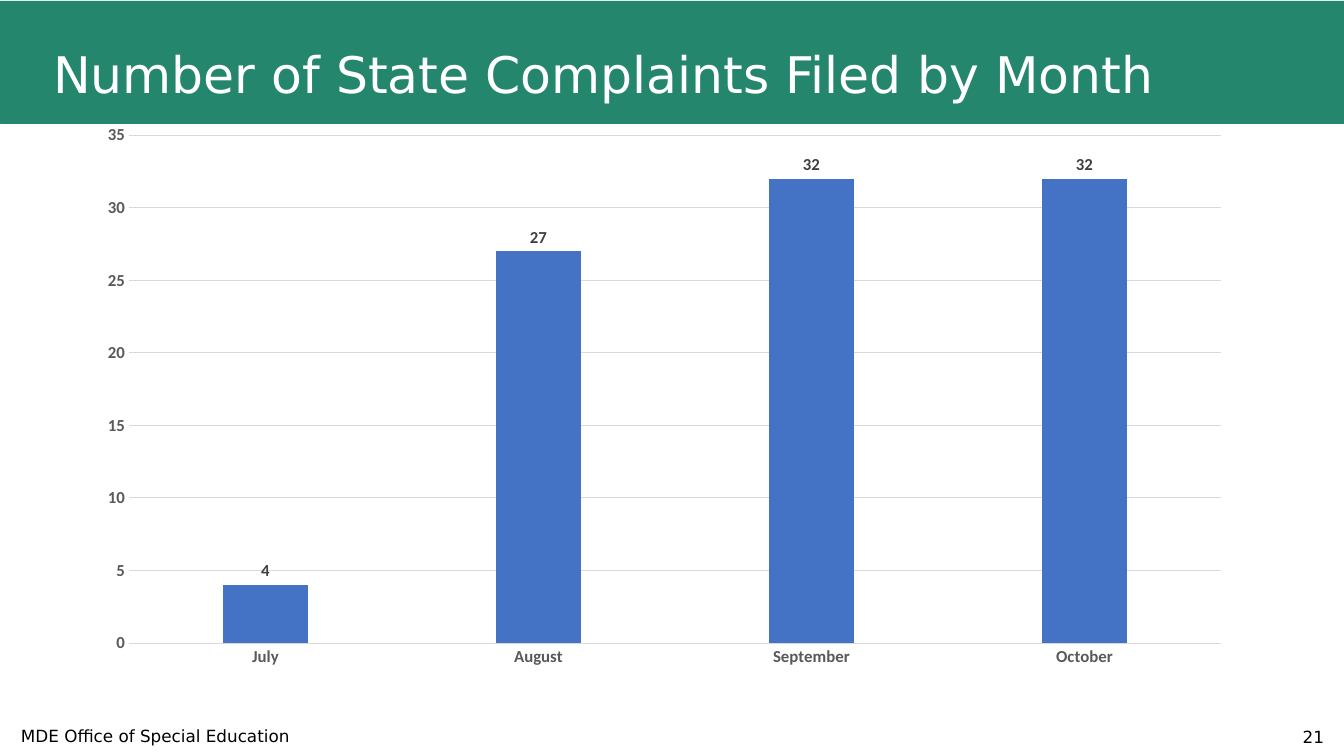
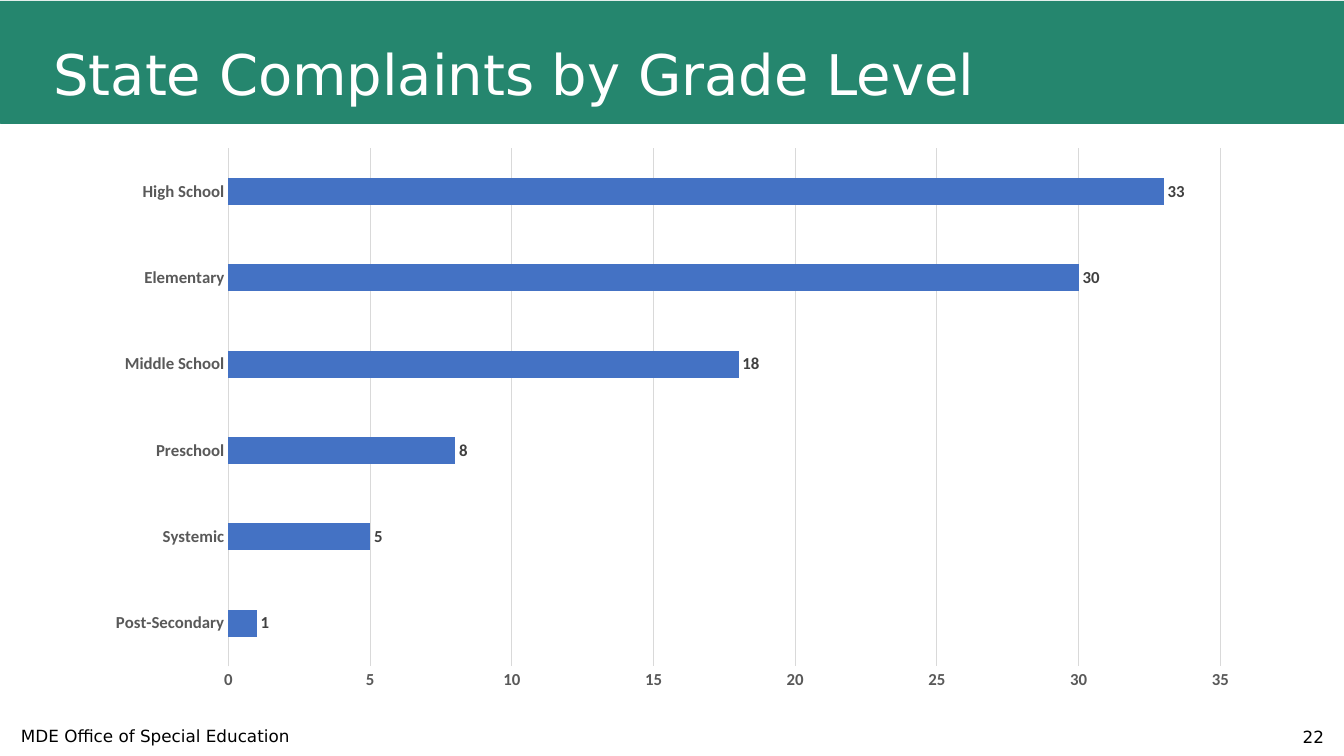
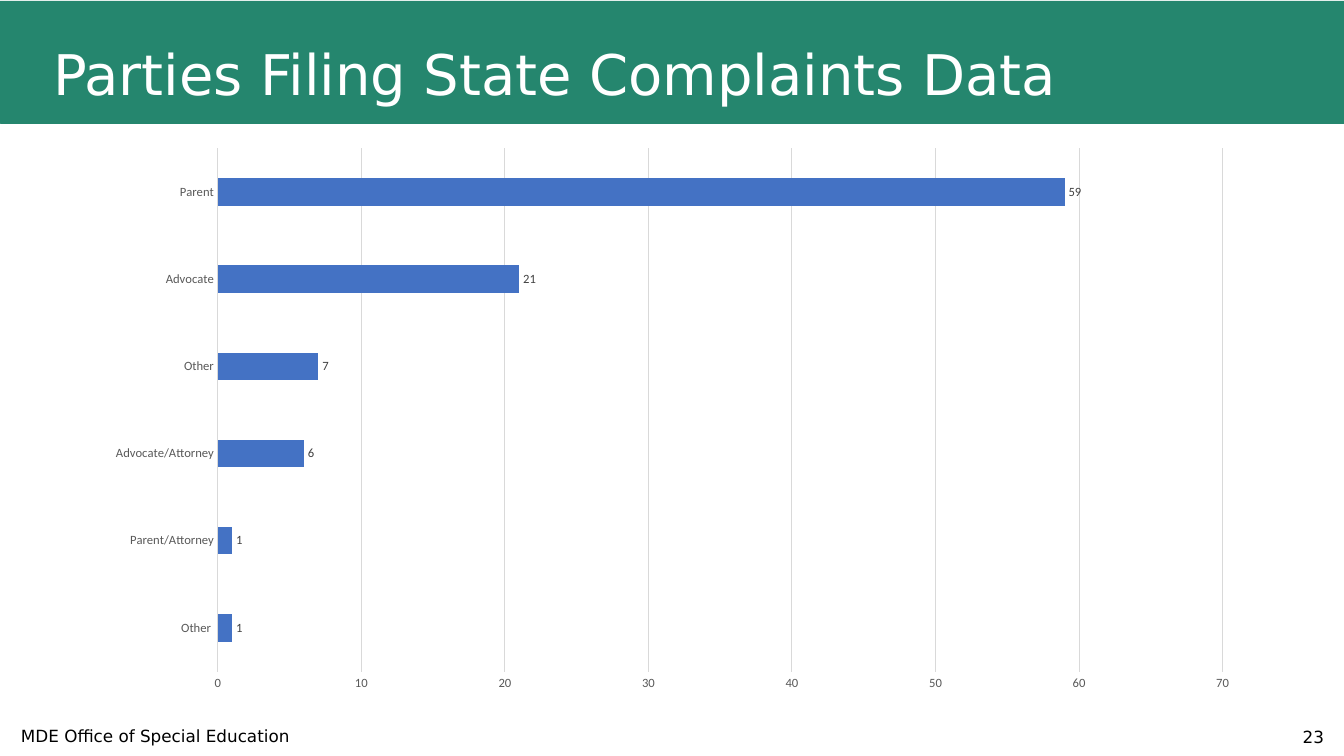
import pptx
import pptx.chart.data
import pptx.dml.color
import pptx.enum.chart
import pptx.enum.shapes
import pptx.enum.text
import pptx.util
from pptx.util import Inches

COLORS = {
    "band": "25866E",
    "title": "FFFFFF",
    "footer": "000000",
    "bar": "4472C4",
    "axis": "595959",
    "label": "404040",
    "rule": "D9D9D9",
}
TEXT_FONT = "DejaVu Sans"
CHART_FONT = "Calibri"
FOOTER = "MDE Office of Special Education"
FIRST_NUMBER = 21

CHART_TYPE = pptx.enum.chart.XL_CHART_TYPE
ALIGN = pptx.enum.text.PP_ALIGN


def rgb(name):
    return pptx.dml.color.RGBColor.from_string(COLORS[name])


class Deck:
    """The shared style and the slide being built."""

    def __init__(self):
        self.prs = pptx.Presentation()
        self.prs.slide_width = Inches(13.33)
        self.prs.slide_height = Inches(7.5)
        self.s = None

    def slide(self, title, title_size=40):
        """Start a slide with its band, title, footer and number."""
        self.s = self.prs.slides.add_slide(self.prs.slide_layouts[6])
        number = FIRST_NUMBER + len(self.prs.slides) - 1
        self.band()
        p = self.text(title, 0.43, 0.31, 12.42, 0.91, title_size, "title")
        p.line_spacing = 0.9
        self.text(FOOTER, 0.11, 7.1, 4.5, 0.4, 12, "footer")
        p = self.text(str(number), 10.23, 7.11, 3, 0.4, 12, "footer")
        p.alignment = ALIGN.RIGHT

    def band(self):
        sp = self.s.shapes.add_shape(
            pptx.enum.shapes.MSO_SHAPE.RECTANGLE,
            0, Inches(0.01), self.prs.slide_width, Inches(1.21))
        sp.shadow.inherit = False
        sp.fill.solid()
        sp.fill.fore_color.rgb = rgb("band")
        sp.line.color.rgb = rgb("band")
        sp.line.width = pptx.util.Pt(0.5)

    def text(self, text, x, y, w, h, size, color):
        """Add a one-line text box and return its paragraph."""
        box = self.s.shapes.add_textbox(
            Inches(x), Inches(y), Inches(w), Inches(h))
        tf = box.text_frame
        tf.word_wrap = True
        tf.vertical_anchor = pptx.enum.text.MSO_ANCHOR.MIDDLE
        tf.text = text
        p = tf.paragraphs[0]
        self.font(p.runs[0].font, TEXT_FONT, size, color)
        return p

    def font(self, font, name, size, color, bold=False):
        font.name = name
        font.size = pptx.util.Pt(size)
        font.bold = bold
        font.color.rgb = rgb(color)

    def rule(self, line):
        line.color.rgb = rgb("rule")
        line.width = pptx.util.Pt(0.75)

    def chart(self, kind, values, x=0.92, y=1.36, size=12, bold=True,
              overlap=0):
        """Add a one-series bar or column chart of a list of pairs."""
        data = pptx.chart.data.CategoryChartData()
        data.categories = [name for name, _ in values]
        data.add_series("Series 1", [value for _, value in values])
        chart = self.s.shapes.add_chart(
            kind, Inches(x), Inches(y), Inches(11.5), Inches(5.6), data).chart
        chart.has_title = False
        chart.has_legend = False
        self.font(chart.font, CHART_FONT, size, "axis", bold)

        for axis in (chart.category_axis, chart.value_axis):
            axis.major_tick_mark = pptx.enum.chart.XL_TICK_MARK.NONE
            axis.minor_tick_mark = pptx.enum.chart.XL_TICK_MARK.NONE
            self.font(axis.tick_labels.font, CHART_FONT, size, "axis", bold)
        self.rule(chart.category_axis.format.line)
        chart.value_axis.format.line.fill.background()
        chart.value_axis.has_major_gridlines = True
        self.rule(chart.value_axis.major_gridlines.format.line)

        plot = chart.plots[0]
        plot.vary_by_categories = False
        plot.gap_width = 219
        plot.overlap = overlap
        fill = plot.series[0].format.fill
        fill.solid()
        fill.fore_color.rgb = rgb("bar")

        plot.has_data_labels = True
        labels = plot.data_labels
        labels.show_value = True
        labels.position = pptx.enum.chart.XL_LABEL_POSITION.OUTSIDE_END
        self.font(labels.font, CHART_FONT, size, "label", bold)


def main():
    deck = Deck()

    deck.slide("Number of State Complaints Filed by Month", title_size=36)
    deck.chart(
        CHART_TYPE.COLUMN_CLUSTERED,
        [("July", 4), ("August", 27), ("September", 32), ("October", 32)],
        x=0.84, y=1.13, overlap=-27)

    deck.slide("State Complaints by Grade Level")
    deck.chart(
        CHART_TYPE.BAR_CLUSTERED,
        [("Post-Secondary", 1), ("Systemic", 5), ("Preschool", 8),
         ("Middle School", 18), ("Elementary", 30), ("High School", 33)])

    deck.slide("Parties Filing State Complaints Data")
    deck.chart(
        CHART_TYPE.BAR_CLUSTERED,
        [("Other ", 1), ("Parent/Attorney", 1), ("Advocate/Attorney", 6),
         ("Other", 7), ("Advocate", 21), ("Parent", 59)],
        size=9, bold=False)

    deck.prs.save("out.pptx")


if __name__ == "__main__":
    main()
